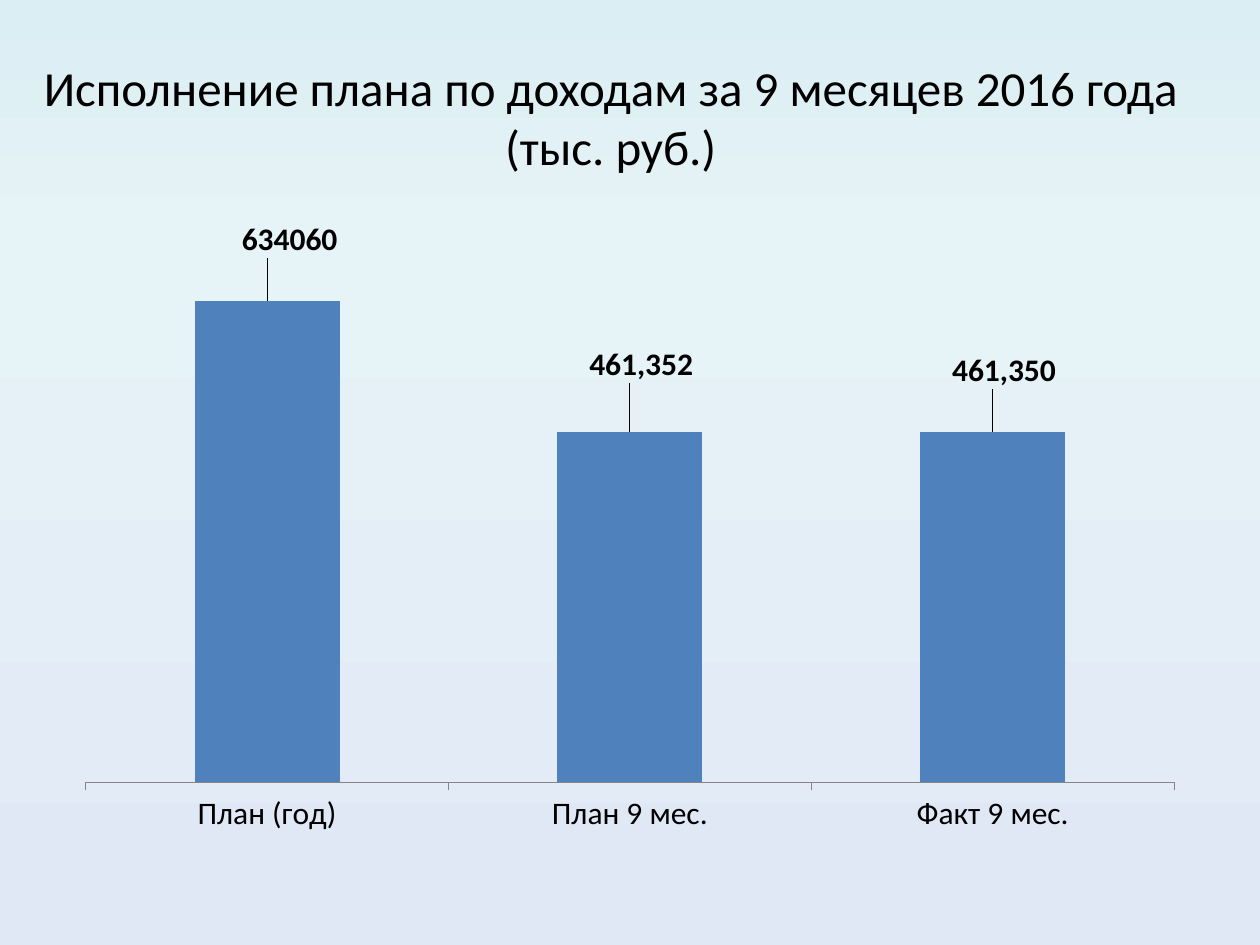
from copy import deepcopy

from lxml.etree import fromstring
from pptx import Presentation
from pptx.chart.data import CategoryChartData
from pptx.dml.color import RGBColor
from pptx.enum.chart import XL_CHART_TYPE as ChartType
from pptx.enum.chart import XL_LABEL_POSITION as LabelPosition
from pptx.enum.chart import XL_TICK_MARK as TickMark
from pptx.enum.text import MSO_ANCHOR, PP_ALIGN
from pptx.oxml.ns import nsdecls, qn
from pptx.util import Cm, Pt

TITLE = "Исполнение плана по доходам за 9 месяцев 2016 года\v(тыс. руб.)"
FONT = "Calibri"
BACKGROUND = [(0, "DBEEF4"), (0.25, "E6F3F7"), (1, "E1E8F5")]
# category, value, label text (None shows the value), label shift as share of the chart
INCOME = [
    ("План (год)", 634060, "634060", (0.02, -0.06)),
    ("План 9 мес.", 461352, None, (0.01, -0.07)),
    ("Факт 9 мес.", 461350, None, (0.01, -0.06)),
]
PLOT_AREA = {"x": 0.02, "y": 0.04, "w": 0.96, "h": 0.86}


def color(value):
    return RGBColor.from_string(value)


def style_font(font, size, bold=False):
    font.name, font.size, font.bold = FONT, Pt(size), bold
    font.color.rgb = color("000000")


def manual_layout(modes, sizes):
    """Return a c:layout element with the given modes and shares of the chart."""
    items = [*modes.items(), *sizes.items()]
    inner = "".join(f'<c:{name} val="{value}"/>' for name, value in items)
    return fromstring(
        f'<c:layout {nsdecls("c")}><c:manualLayout>{inner}</c:manualLayout></c:layout>')


def paint_background(slide):
    fill = slide.background.fill
    fill.gradient()
    fill.gradient_angle = 270
    stop_list = slide.element.find(".//" + qn("a:gsLst"))
    stop_list.append(deepcopy(stop_list[-1]))
    for stop, (position, value) in zip(fill.gradient_stops, BACKGROUND):
        stop.position = position
        stop.color.rgb = color(value)


def add_title(slide):
    title = slide.shapes.title
    title.left, title.top, title.width, title.height = Cm(0.5), Cm(0.76), Cm(23.62), Cm(3.18)
    frame = title.text_frame
    frame.text = TITLE
    frame.word_wrap = True
    frame.vertical_anchor = MSO_ANCHOR.MIDDLE
    paragraph = frame.paragraphs[0]
    paragraph.alignment = PP_ALIGN.CENTER
    style_font(paragraph.font, 28)


def add_income_chart(slide):
    data = CategoryChartData(number_format="#,##0")
    data.categories = [row[0] for row in INCOME]
    data.add_series("Series 1", [row[1] for row in INCOME])
    chart = slide.shapes.add_chart(
        ChartType.COLUMN_CLUSTERED, Cm(1.27), Cm(4.45), Cm(22.86), Cm(12.57), data).chart
    chart.has_title = chart.has_legend = False
    style_font(chart.font, 18)

    value_axis = chart.value_axis
    value_axis.minimum_scale, value_axis.maximum_scale = 0, 700000
    value_axis.has_major_gridlines = False
    value_axis.visible = False
    category_axis = chart.category_axis
    category_axis.major_tick_mark = TickMark.OUTSIDE
    category_axis.format.line.color.rgb = color("868686")

    plot = chart.plots[0]
    plot.gap_width = 150
    plot.vary_by_categories = False
    series = plot.series[0]
    series.format.fill.solid()
    series.format.fill.fore_color.rgb = color("4F81BD")
    labels = series.data_labels
    labels.show_value = True
    labels.number_format, labels.number_format_is_linked = "#,##0", False
    labels.position = LabelPosition.OUTSIDE_END
    style_font(labels.font, 18, bold=True)

    for index, (_, _, text, _) in enumerate(INCOME):
        label = series.points[index].data_label
        if text:
            label.text_frame.text = text
            style_font(label.text_frame.paragraphs[0].runs[0].font, 18, bold=True)
        else:
            style_font(label.font, 18, bold=True)
        label.position = LabelPosition.OUTSIDE_END

    chart_xml = chart.element if hasattr(chart, "element") else chart._chartSpace
    for label_xml, row in zip(chart_xml.iter(qn("c:dLbl")), INCOME):
        for layout in label_xml.findall(qn("c:layout")):
            label_xml.remove(layout)
        label_xml.insert(1, manual_layout({}, dict(zip("xy", row[3]))))

    plot_area = chart_xml.find(".//" + qn("c:plotArea"))
    for layout in plot_area.findall(qn("c:layout")):
        plot_area.remove(layout)
    modes = {"layoutTarget": "inner", "xMode": "edge", "yMode": "edge"}
    plot_area.insert(0, manual_layout(modes, PLOT_AREA))


def main():
    presentation = Presentation()
    presentation.slide_width, presentation.slide_height = Cm(25.4), Cm(19.05)
    slide = presentation.slides.add_slide(presentation.slide_layouts[5])
    paint_background(slide)
    add_title(slide)
    add_income_chart(slide)
    presentation.save("out.pptx")


if __name__ == "__main__":
    main()
